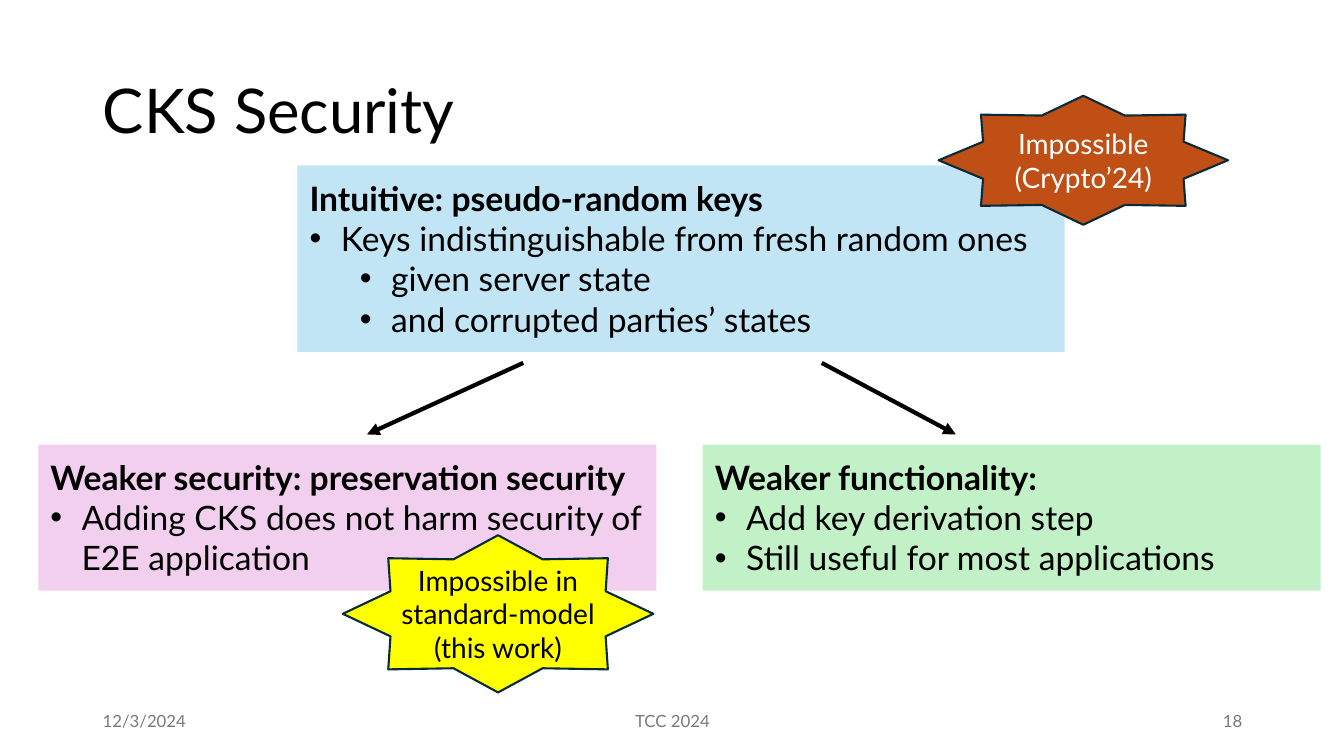
import pptx
import pptx.util
import pptx.dml.color
import pptx.enum.shapes
import pptx.enum.text
import pptx.oxml.ns
from dataclasses import dataclass

Inches = pptx.util.Inches
Pt = pptx.util.Pt
KIND = pptx.enum.shapes.MSO_SHAPE
ALIGN = pptx.enum.text.PP_ALIGN
ANCHOR = pptx.enum.text.MSO_ANCHOR
FIT = pptx.enum.text.MSO_AUTO_SIZE


@dataclass(frozen=True)
class Theme:
    font: str = "Lato"
    ink: str = "000000"
    white: str = "FFFFFF"
    gray: str = "797979"
    edge: str = "092A39"
    blue: str = "C1E5F5"
    pink: str = "F2CFEE"
    green: str = "C2F1C8"
    rust: str = "C04F15"
    yellow: str = "FFFF00"
    head: int = 44
    body: int = 24
    badge: int = 20
    foot: int = 12


def apply(target, values):
    for name, value in values.items():
        setattr(target, name, value)


def color(code):
    return pptx.dml.color.RGBColor.from_string(code)


def add_xml(parent, tag, **attrs):
    parent.append(parent.makeelement(pptx.oxml.ns.qn(tag), attrs))


class Painter:
    def __init__(self, slide, theme):
        self.slide = slide
        self.theme = theme

    def label(self, para, text, size, ink, bold=False, **style):
        apply(para, style)
        run = para.add_run()
        run.text = text
        apply(run.font, {"name": self.theme.font, "size": Pt(size), "bold": bold})
        run.font.color.rgb = color(ink)

    def lines(self, frame, texts, size, ink, **style):
        for index, text in enumerate(texts):
            para = frame.add_paragraph() if index else frame.paragraphs[0]
            self.label(para, text, size, ink, **style)

    def title(self, text, left, top, width, height):
        holder = self.slide.shapes.title
        apply(holder, {"left": Inches(left), "top": Inches(top),
                       "width": Inches(width), "height": Inches(height)})
        frame = holder.text_frame
        apply(frame, {"vertical_anchor": ANCHOR.MIDDLE, "word_wrap": True,
                      "auto_size": FIT.NONE})
        self.label(frame.paragraphs[0], text, self.theme.head, self.theme.ink,
                   alignment=ALIGN.LEFT, line_spacing=0.9)

    def shape(self, kind, box, fill):
        item = self.slide.shapes.add_shape(kind, *map(Inches, box))
        item.shadow.inherit = False
        item.fill.solid()
        item.fill.fore_color.rgb = color(fill)
        return item

    def panel(self, box, fill, header, points):
        item = self.shape(KIND.RECTANGLE, box, fill)
        item.line.fill.background()
        frame = item.text_frame
        pad = Inches(0.12)
        apply(frame, {"margin_left": pad, "margin_right": pad, "margin_top": pad,
                      "margin_bottom": pad, "word_wrap": True,
                      "vertical_anchor": ANCHOR.TOP, "auto_size": FIT.SHAPE_TO_FIT_TEXT})
        size, ink = self.theme.body, self.theme.ink
        self.label(frame.paragraphs[0], header, size, ink, True, alignment=ALIGN.LEFT)
        for level, text in points:
            para = frame.add_paragraph()
            self.label(para, text, size, ink, alignment=ALIGN.LEFT, level=level)
            props = para._p.get_or_add_pPr()
            props.set("marL", str(Inches(0.31 + 0.5 * level)))
            props.set("indent", str(Inches(-0.31)))
            add_xml(props, "a:buFont", typeface="Arial")
            add_xml(props, "a:buChar", char="•")

    def badge(self, box, fill, ink, texts):
        item = self.shape(KIND.STAR_8_POINT, box, fill)
        item.adjustments[0] = 0.375
        item.line.color.rgb = color(self.theme.edge)
        item.line.width = Pt(1.5)
        frame = item.text_frame
        apply(frame, {"word_wrap": True, "vertical_anchor": ANCHOR.MIDDLE})
        self.lines(frame, texts, self.theme.badge, ink, alignment=ALIGN.CENTER)

    def arrow(self, start, end):
        kind = pptx.enum.shapes.MSO_CONNECTOR.STRAIGHT
        item = self.slide.shapes.add_connector(kind, *map(Inches, start + end))
        item.line.color.rgb = color(self.theme.ink)
        item.line.width = Pt(3)
        props = item._element.spPr
        add_xml(props.find(pptx.oxml.ns.qn("a:ln")), "a:tailEnd", type="triangle")
        add_xml(props, "a:effectLst")

    def footer(self, text, left, width, align):
        item = self.slide.shapes.add_textbox(*map(Inches, (left, 6.95, width, 0.4)))
        frame = item.text_frame
        apply(frame, {"word_wrap": True, "vertical_anchor": ANCHOR.MIDDLE})
        self.lines(frame, [text], self.theme.foot, self.theme.gray, alignment=align)


def main():
    deck = pptx.Presentation()
    apply(deck, {"slide_width": Inches(13.33), "slide_height": Inches(7.5)})
    theme = Theme()
    paint = Painter(deck.slides.add_slide(deck.slide_layouts[5]), theme)

    paint.title("CKS Security", 0.92, 0.4, 11.5, 1.45)
    paint.panel((2.95, 1.64, 7.61, 1.85), theme.blue, "Intuitive: pseudo-random keys", [
        (0, "Keys indistinguishable from fresh random ones"),
        (1, "given server state"),
        (1, "and corrupted parties’ states"),
    ])
    paint.panel((0.38, 4.41, 6.13, 1.45), theme.pink,
                "Weaker security: preservation security",
                [(0, "Adding CKS does not harm security of E2E application")])
    paint.panel((6.97, 4.41, 6.13, 1.45), theme.green, "Weaker functionality:", [
        (0, "Add key derivation step"),
        (0, "Still useful for most applications"),
    ])
    paint.badge((9.31, 0.95, 2.87, 1.28), theme.rust, theme.white,
                ["Impossible", "(Crypto’24)"])
    for start, end in ((5.19, 3.64), (8.15, 9.48)):
        paint.arrow((start, 3.6), (end, 4.31))
    paint.badge((3.4, 5.31, 3.08, 1.56), theme.yellow, theme.ink,
                ["Impossible in standard-model", "(this work)"])
    paint.footer("12/3/2024", 0.92, 3, ALIGN.LEFT)
    paint.footer("TCC 2024", 4.42, 4.5, ALIGN.CENTER)
    paint.footer("18", 9.42, 3, ALIGN.RIGHT)

    deck.save("out.pptx")


if __name__ == "__main__":
    main()
